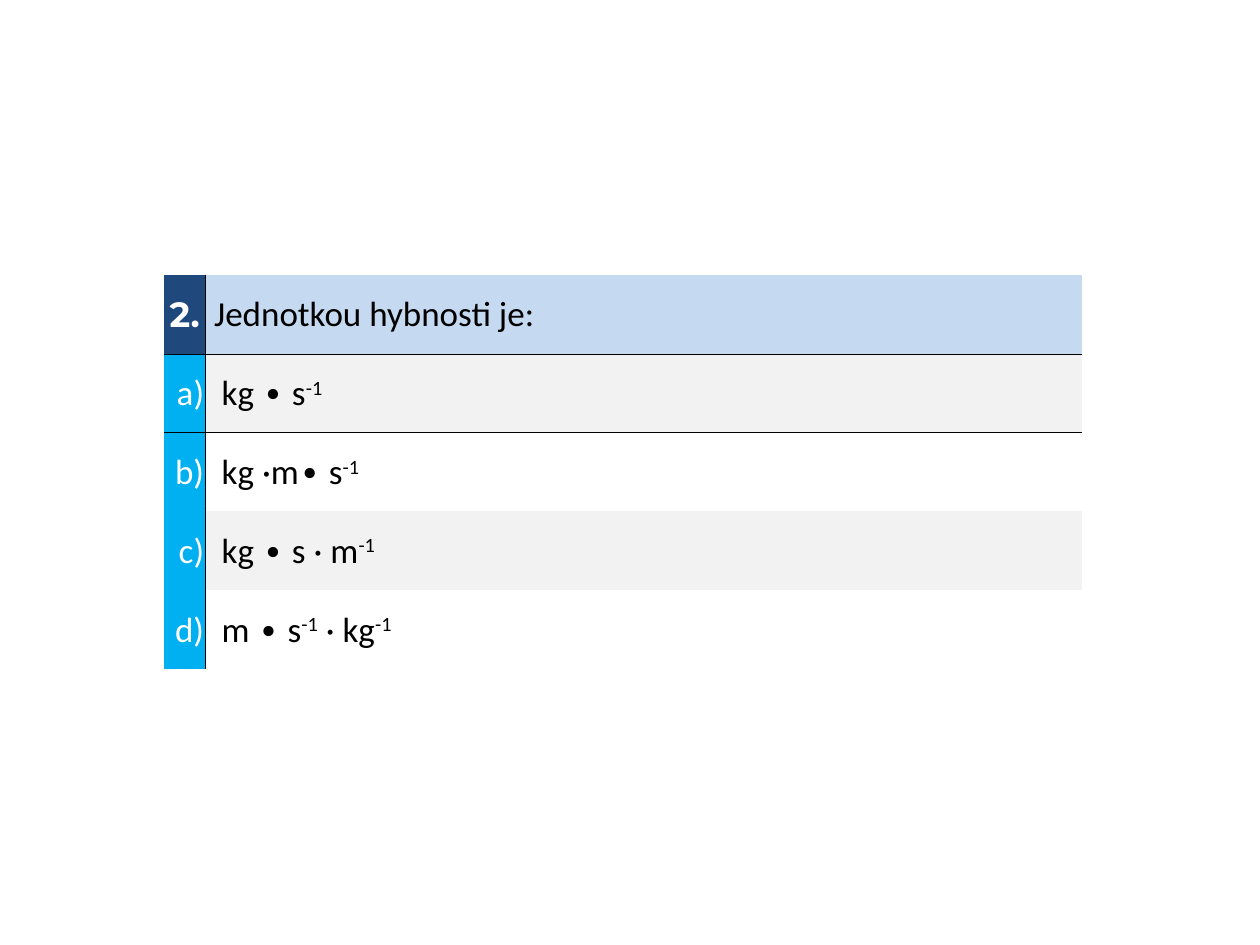
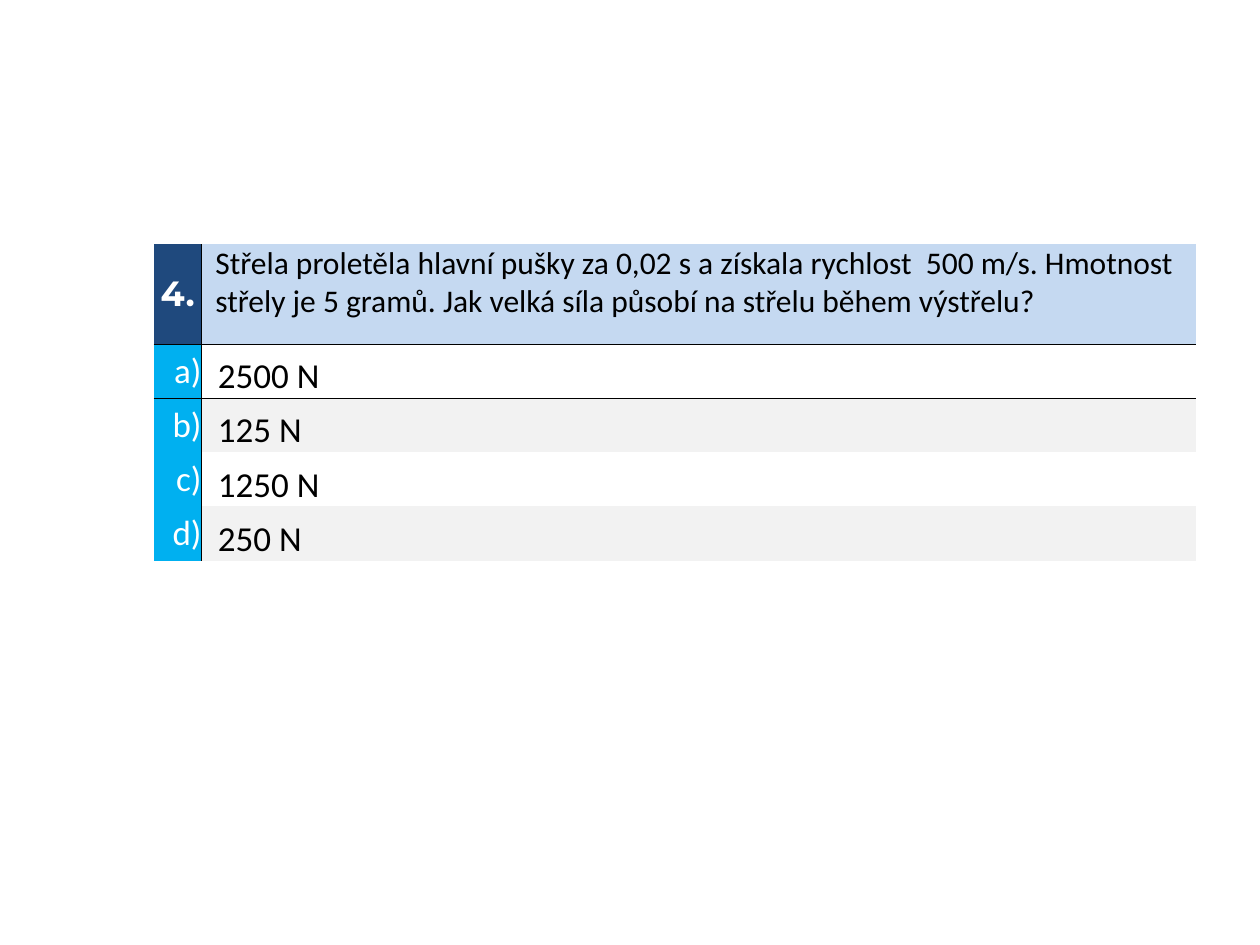
from dataclasses import dataclass

from lxml.etree import SubElement
from pptx import Presentation
from pptx.dml.color import RGBColor
from pptx.enum.text import MSO_ANCHOR as Anchor, PP_ALIGN as Align
from pptx.oxml import parse_xml
from pptx.oxml.ns import nsdecls, qn
from pptx.slide import Slide
from pptx.table import _Cell as Cell
from pptx.util import Inches, Pt

NAVY, PALE, SKY, GREY = "1F497D", "C5D9F1", "00B0F0", "F2F2F2"
WHITE, BLACK = "FFFFFF", "000000"
BODY, BOLD = "Calibri", "Montserrat"
PLAIN = "{2D5ABB26-0587-4C30-8999-92F81FD0307C}"
INDENT = 0.13


@dataclass
class Quiz:
    """Lengths are in inches; pieces of an answer alternate base and superscript."""
    number: str
    ask: str
    answers: list[tuple[str, ...]]
    left: float
    top: float
    height: float
    head: float
    cols: tuple[float, float]
    pad: float
    ask_size: int
    ask_pad: float
    ask_anchor: Anchor
    anchor: Anchor
    band: int


QUIZZES = [
    Quiz("2.", "Jednotkou hybnosti je:",
         [("kg ∙ s", "-1"), ("kg ·m∙ s", "-1"), ("kg ∙ s · m", "-1"),
          ("m ∙ s", "-1", " · kg", "-1")],
         left=1.3, top=2.18, height=3.13, head=0.63, cols=(0.33, 6.96), pad=0.01,
         ask_size=20, ask_pad=0.07, ask_anchor=Anchor.MIDDLE,
         anchor=Anchor.MIDDLE, band=0),
    Quiz("4.", "Střela proletěla hlavní pušky za 0,02 s a získala rychlost  500 m/s. "
         "Hmotnost střely je 5 gramů. Jak velká síla působí na střelu během výstřelu?",
         [("2500 N",), ("125 N",), ("1250 N",), ("250 N",)],
         left=1.22, top=1.94, height=2.51, head=0.79, cols=(0.38, 7.89), pad=0,
         ask_size=18, ask_pad=0.11, ask_anchor=Anchor.TOP,
         anchor=Anchor.BOTTOM, band=1),
]


def rgb(code: str) -> RGBColor:
    return RGBColor.from_string(code)


def rule(cell: Cell, sides: str) -> None:
    """Draw thin black borders; sides come in the order L, R, T, B."""
    props = cell._tc.get_or_add_tcPr()
    for spot, side in enumerate(sides):
        line = parse_xml(f'<a:ln{side} {nsdecls("a")} w="{Pt(0.5)}"/>')
        fill = SubElement(line, qn("a:solidFill"))
        SubElement(fill, qn("a:srgbClr"), val=BLACK)
        props.insert(spot, line)


def write(cell: Cell, parts: tuple[str, ...], fill: str | None, color: str = BLACK,
          size: int = 20, face: str = BODY, bold: bool = False,
          align: Align = Align.LEFT, anchor: Anchor = Anchor.MIDDLE,
          left: float = 0, pad: float = 0) -> None:
    if fill:
        cell.fill.solid()
        cell.fill.fore_color.rgb = rgb(fill)
    else:
        cell.fill.background()
    cell.vertical_anchor = anchor
    cell.margin_left = Inches(left)
    cell.margin_right = cell.margin_top = Inches(pad)
    cell.margin_bottom = 0
    para = cell.text_frame.paragraphs[0]
    para.alignment = align
    font = para.font
    font.name, font.size, font.bold = face, Pt(size), bold
    font.color.rgb = rgb(color)
    for i, part in enumerate(parts):
        run = para.add_run()
        run.text = part
        if i % 2:
            run._r.get_or_add_rPr().set("baseline", "30000")


def draw(slide: Slide, quiz: Quiz) -> None:
    count = len(quiz.answers)
    frame = slide.shapes.add_table(
        count + 1, 2, Inches(quiz.left), Inches(quiz.top),
        Inches(sum(quiz.cols)), Inches(quiz.height))
    table = frame.table
    table.first_row = table.horz_banding = False
    table._tbl.tblPr.find(qn("a:tableStyleId")).text = PLAIN
    for col, width in zip(table.columns, quiz.cols):
        col.width = Inches(width)
    step = (quiz.height - quiz.head) / count
    for i, row in enumerate(table.rows):
        row.height = Inches(step if i else quiz.head)

    pad = quiz.pad
    write(table.cell(0, 0), (quiz.number,), NAVY, WHITE, face=BOLD, bold=True,
          align=Align.CENTER, left=pad, pad=pad)
    write(table.cell(0, 1), (quiz.ask,), PALE, size=quiz.ask_size,
          anchor=quiz.ask_anchor, left=quiz.ask_pad, pad=pad)
    for i, (mark, parts) in enumerate(zip("abcd", quiz.answers)):
        write(table.cell(i + 1, 0), (f"{mark})",), SKY, WHITE,
              align=Align.RIGHT, left=pad, pad=pad)
        write(table.cell(i + 1, 1), parts, GREY if i % 2 == quiz.band else None,
              anchor=quiz.anchor, left=INDENT, pad=pad)
    for i in range(count + 1):
        edge = {0: "B", 1: "T"}.get(i, "")
        rule(table.cell(i, 0), "R" + edge)
        rule(table.cell(i, 1), "L" + edge)


def main() -> None:
    deck = Presentation()
    deck.slide_width, deck.slide_height = Inches(10), Inches(7.5)
    for quiz in QUIZZES:
        draw(deck.slides.add_slide(deck.slide_layouts[6]), quiz)
    deck.save("out.pptx")


if __name__ == "__main__":
    main()
